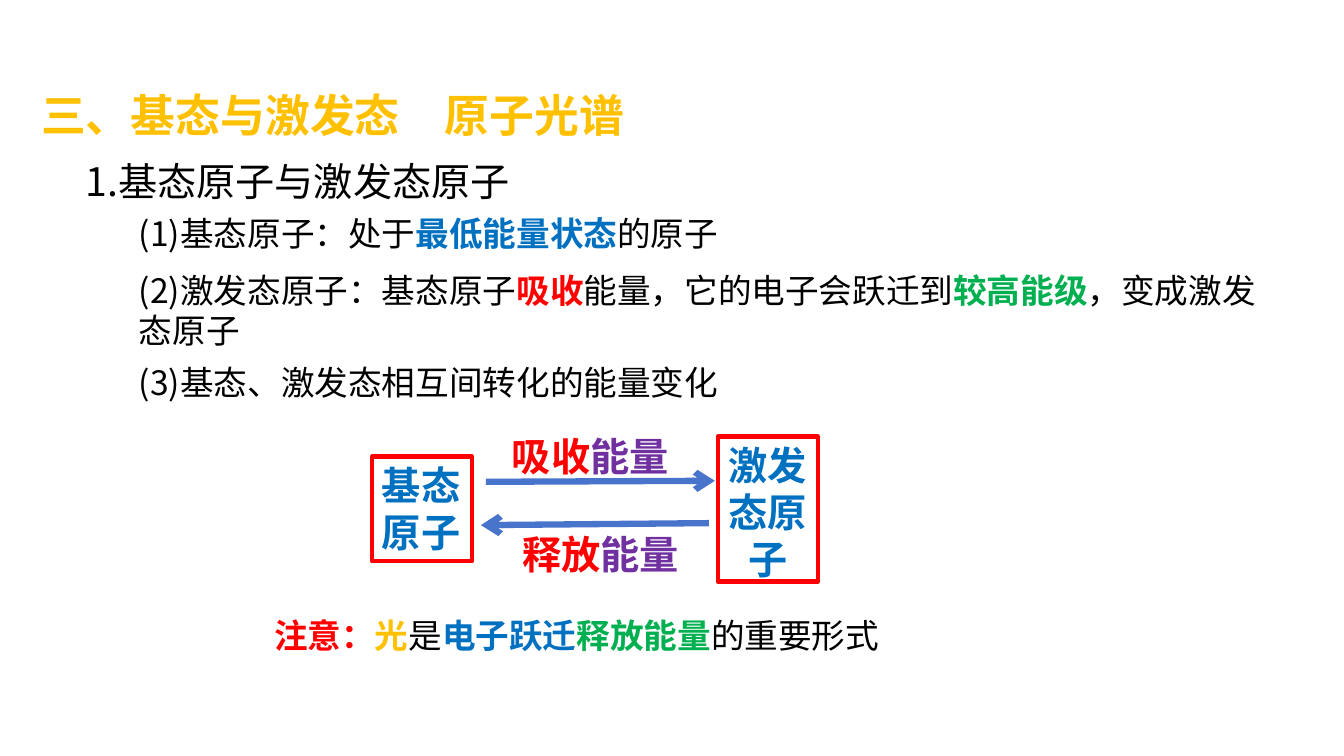
import pptx
import pptx.dml.color
import pptx.enum.shapes
import pptx.enum.text
import pptx.oxml.ns
import pptx.util
from lxml import etree

Inches = pptx.util.Inches
FONT = "Noto Sans CJK SC"
BLACK, RED, BLUE, GREEN = "000000", "FF0000", "0070C0", "00B050"
PURPLE, GOLD, ARROW_BLUE = "7030A0", "FFC000", "4874CB"


def color(hex_string):
    return pptx.dml.color.RGBColor.from_string(hex_string)


def add_runs(shape, size, runs):
    """Write (text, colour) runs; every colour but black is bold."""
    frame = shape.text_frame
    frame.word_wrap = True
    frame.vertical_anchor = pptx.enum.text.MSO_ANCHOR.TOP
    paragraph = frame.paragraphs[0]
    paragraph.alignment = pptx.enum.text.PP_ALIGN.LEFT
    for text, hex_string in runs:
        run = paragraph.add_run()
        run.text = text
        run.font.size = pptx.util.Pt(size)
        run.font.bold = hex_string != BLACK
        run.font.color.rgb = color(hex_string)
        run.font.name = FONT
        east_asian = etree.SubElement(run._r.get_or_add_rPr(), pptx.oxml.ns.qn("a:ea"))
        east_asian.set("typeface", FONT)
    return paragraph


def add_text(slide, left, top, width, height, size, runs):
    box = slide.shapes.add_textbox(Inches(left), Inches(top), Inches(width), Inches(height))
    add_runs(box, size, runs)


def add_state(slide, left, top, height, text):
    """Add a red-framed box naming an atomic state."""
    shape = slide.shapes.add_shape(
        pptx.enum.shapes.MSO_SHAPE.RECTANGLE,
        Inches(left), Inches(top), Inches(0.99), Inches(height))
    shape.shadow.inherit = False
    shape.fill.background()
    shape.line.color.rgb = color(RED)
    shape.line.width = pptx.util.Pt(3)
    return add_runs(shape, 28, [(text, BLUE)])


def add_arrow(slide, start_x, start_y, end_x, end_y):
    arrow = slide.shapes.add_connector(
        pptx.enum.shapes.MSO_CONNECTOR.STRAIGHT,
        Inches(start_x), Inches(start_y), Inches(end_x), Inches(end_y))
    arrow.line.color.rgb = color(ARROW_BLUE)
    arrow.line.width = pptx.util.Pt(4.5)
    head = etree.SubElement(arrow.line._get_or_add_ln(), pptx.oxml.ns.qn("a:tailEnd"))
    head.set("type", "arrow")
    etree.SubElement(arrow._element.spPr, pptx.oxml.ns.qn("a:effectLst"))


def add_headings(slide, left, top):
    add_text(slide, left, top, 6.11, 0.64, 32, [("三、基态与激发态　原子光谱", GOLD)])
    add_text(slide, left + 0.44, top + 0.69, 4.56, 0.57, 28, [("1.基态原子与激发态原子", BLACK)])


def add_definitions(slide, left, top, width):
    add_text(slide, left, top, width, 0.5, 24, [
        ("(1)基态原子：处于", BLACK), ("最低能量状态", BLUE), ("的原子", BLACK)])
    add_text(slide, left, top + 0.57, width, 0.91, 24, [
        ("(2)激发态原子：基态原子", BLACK), ("吸收", RED),
        ("能量，它的电子会跃迁到", BLACK), ("较高能级", GREEN),
        ("，变成激发态原子", BLACK)])
    add_text(slide, left, top + 1.48, width, 0.5, 24, [
        ("(3)基态、激发态相互间转化的能量变化", BLACK)])


def add_transition_diagram(slide, left, top):
    add_state(slide, left, top + 0.29, 1.04, "基态原子")
    excited = add_state(slide, left + 3.43, top + 0.09, 1.44, "激发态原子")
    excited.alignment = pptx.enum.text.PP_ALIGN.CENTER
    add_arrow(slide, left + 1.13, top + 0.54, left + 3.4, top + 0.53)
    add_arrow(slide, left + 3.34, top + 0.95, left + 1.08, top + 0.97)
    for action, offset_x, offset_y in (("吸收", 1.29, 0), ("释放", 1.39, 0.97)):
        add_text(slide, left + offset_x, top + offset_y, 1.94, 0.57, 28,
                 [(action, RED), ("能量", PURPLE)])


def add_note(slide, left, top):
    add_text(slide, left, top, 6.42, 0.5, 24, [
        ("注意：", RED), ("光", GOLD), ("是", BLACK), ("电子跃迁", BLUE),
        ("释放能量", GREEN), ("的重要形式", BLACK)])


def main():
    presentation = pptx.Presentation()
    presentation.slide_width = Inches(13.33)
    presentation.slide_height = Inches(7.5)
    slide = presentation.slides.add_slide(presentation.slide_layouts[6])
    add_headings(slide, 0.31, 0.82)
    add_definitions(slide, 1.28, 2.06, 11.59)
    add_transition_diagram(slide, 3.69, 4.24)
    add_note(slide, 2.62, 6.05)
    presentation.save("out.pptx")


if __name__ == "__main__":
    main()
